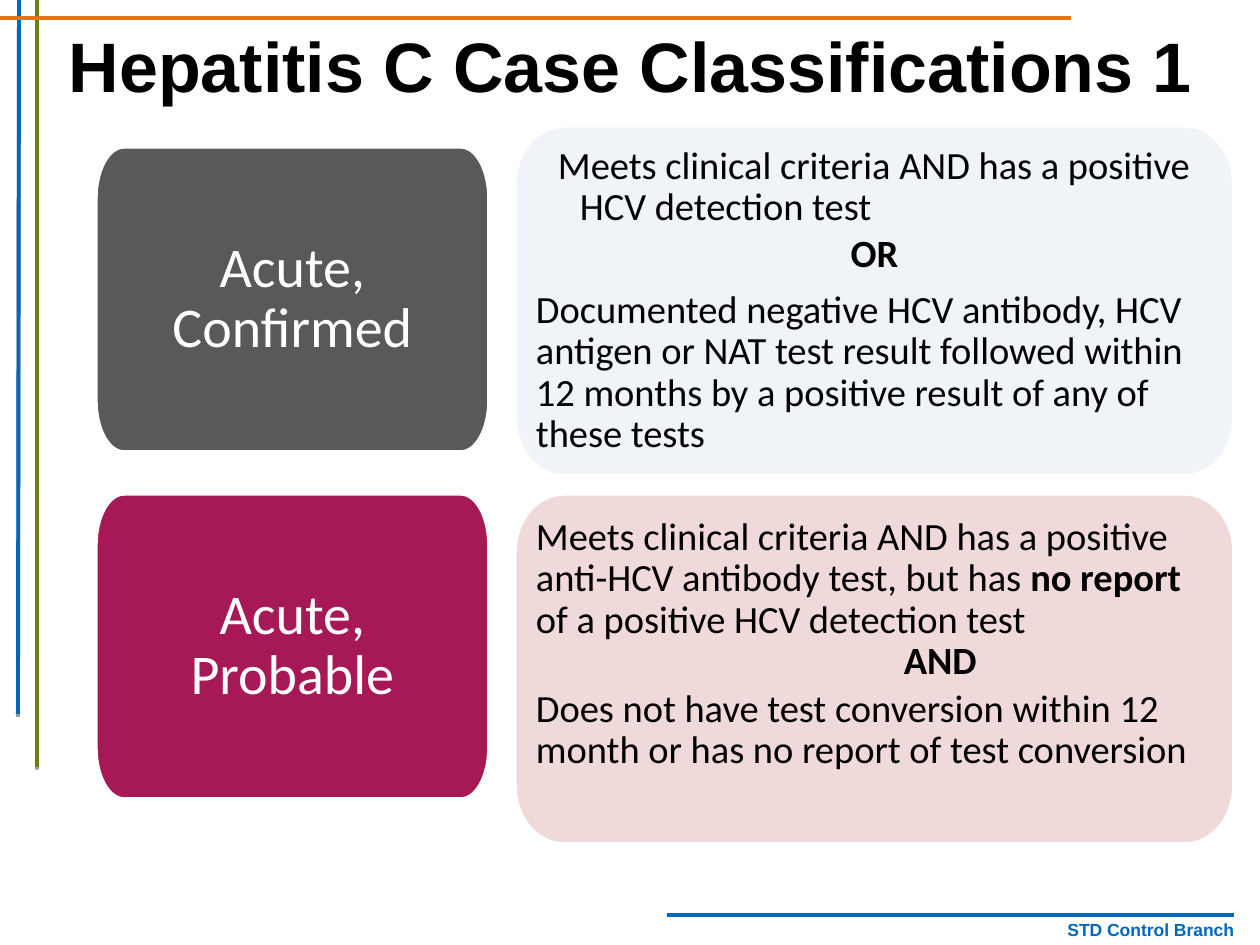
"""Build the slide of hepatitis C case classifications."""
from lxml import etree
from pptx import Presentation
from pptx.dml.color import RGBColor
from pptx.enum import shapes, text
from pptx.oxml.ns import qn
from pptx.util import Pt

PX = 914400 / 126
LEFT, CENTER, RIGHT = text.PP_ALIGN.LEFT, text.PP_ALIGN.CENTER, text.PP_ALIGN.RIGHT
TOP, MIDDLE = text.MSO_ANCHOR.TOP, text.MSO_ANCHOR.MIDDLE
CURVE = 0.55

RULES = [
    ((667, 915), (1234, 915), "0167BB", False),
    ((19, 0), (18, 714), "0167BB", True),
    ((37, 0), (37, 767), "658313", True),
    ((0, 18), (1071, 18), "E47313", False),
]
TITLE = "Hepatitis C Case Classifications 1"
BRANCH = "STD Control Branch"

CRITERIA_FIELDS = ("runs", "align", "margin", "indent", "after")
CLASSES = [
    {
        "name": "Acute, Confirmed", "card_top": 147, "panel_top": 126,
        "card_fill": "595959", "panel_fill": "F0F3F8", "anchor": MIDDLE, "inset": 15,
        "criteria": [
            ([("Meets clinical criteria AND has a positive HCV detection test", False)], LEFT, 44, -22, 3.3),
            ([("OR", True)], CENTER, 0, 0, 7.7),
            ([("Documented negative HCV antibody, HCV antigen or NAT test result followed "
               "within 12 months by a positive result of any of these tests", False)], LEFT, 0, 0, 0),
        ],
    },
    {
        "name": "Acute, Probable", "card_top": 494, "panel_top": 494,
        "card_fill": "A71956", "panel_fill": "F0D9D9", "anchor": TOP, "inset": 23,
        "criteria": [
            ([("Meets clinical criteria AND has a positive anti-HCV antibody test, but has ", False),
              ("no report ", True), ("of a positive HCV detection test", False)], LEFT, 0, 0, 0),
            ([("AND", True)], LEFT, 368, 0, 3.3),
            ([("Does not have test conversion within 12 month or has no report of test "
               "conversion", False)], LEFT, 0, 0, 0),
        ],
    },
]
CARD = {"left": 96, "width": 393, "height": 305, "radii": (28, 51)}
PANEL = {"left": 515, "width": 719, "height": 350, "radii": (49, 58)}


def emu(px):
    return round(px * PX)


def color(value):
    return RGBColor.from_string(value)


def add_rule(slide, start, end, tint, shadowed):
    rule = slide.shapes.add_connector(
        shapes.MSO_CONNECTOR.STRAIGHT, *map(emu, start + end))
    rule.line.color.rgb = color(tint)
    rule.line.width = Pt(2.25)
    effects = etree.SubElement(rule._element.spPr, qn("a:effectLst"))
    if shadowed:
        shadow = etree.SubElement(effects, qn("a:outerShdw"), dist="20320", dir="5400000")
        black = etree.SubElement(shadow, qn("a:srgbClr"), val="000000")
        etree.SubElement(black, qn("a:alpha"), val="38000")


def round_corner(segment, start, vertex, end):
    curve = etree.Element(qn("a:cubicBezTo"))
    handles = [tuple(p + CURVE * (v - p) for p, v in zip(point, vertex))
               for point in (start, end)]
    for x, y in (*handles, end):
        etree.SubElement(curve, qn("a:pt"), x=str(emu(x)), y=str(emu(y)))
    segment.getparent().replace(segment, curve)


def add_rounded(slide, top, fill, left, width, height, radii):
    rx, ry = radii
    corners = [
        ((0, ry), (0, 0), (rx, 0)),
        ((width - rx, 0), (width, 0), (width, ry)),
        ((width, height - ry), (width, height), (width - rx, height)),
        ((rx, height), (0, height), (0, height - ry)),
    ]
    outline = [tuple(map(emu, point)) for start, _, end in corners for point in (start, end)]
    builder = slide.shapes.build_freeform(*outline[0])
    builder.add_line_segments(outline[1:], close=True)
    block = builder.convert_to_shape(emu(left), emu(top))
    segments = list(block._element.iter(qn("a:lnTo")))
    for segment, corner in zip(segments[::2], corners):
        round_corner(segment, *corner)
    block.shadow.inherit = False
    block.fill.solid()
    block.fill.fore_color.rgb = color(fill)
    block.line.color.rgb = color("FFFFFF")
    block.line.width = Pt(2)
    return block


def write(frame, paragraphs, font, size, tint, anchor=MIDDLE, insets=(21, 15), spacing=0.9):
    frame.word_wrap = True
    frame.vertical_anchor = anchor
    frame.margin_left = frame.margin_right = emu(insets[0])
    frame.margin_top = frame.margin_bottom = emu(insets[1])
    for index, fields in enumerate(paragraphs):
        entry = dict(zip(CRITERIA_FIELDS, fields))
        paragraph = frame.add_paragraph() if index else frame.paragraphs[0]
        properties = paragraph._p.get_or_add_pPr()
        properties.set("marL", str(emu(entry["margin"])))
        properties.set("indent", str(emu(entry["indent"])))
        paragraph.alignment = entry["align"]
        paragraph.line_spacing = spacing
        paragraph.space_after = Pt(entry["after"])
        for words, bold in entry["runs"]:
            run = paragraph.add_run()
            run.text = words
            run.font.name, run.font.size, run.font.bold = font, Pt(size), bold
            run.font.color.rgb = color(tint)


def add_label(slide, words, box, align, size, tint, insets):
    label = slide.shapes.add_textbox(*map(emu, box))
    write(label.text_frame, [([(words, True)], align, 0, 0, 0)],
          "Arial", size, tint, insets=insets, spacing=1.0)


def main():
    deck = Presentation()
    deck.slide_width, deck.slide_height = emu(1260), emu(945)
    slide = deck.slides.add_slide(deck.slide_layouts[6])
    add_label(slide, BRANCH, (679, 905, 567, 50), RIGHT, 10, "0167BB", (12, 6))
    for rule in RULES:
        add_rule(slide, *rule)
    add_label(slide, TITLE, (53, 21, 1155, 88), CENTER, 40, "000000", (0, 6))
    for case in CLASSES:
        card = add_rounded(slide, case["card_top"], case["card_fill"], **CARD)
        write(card.text_frame, [([(case["name"], False)], CENTER, 0, 0, 0)],
              "Calibri", 32, "FFFFFF")
        panel = add_rounded(slide, case["panel_top"], case["panel_fill"], **PANEL)
        write(panel.text_frame, case["criteria"], "Calibri", 22, "000000",
              case["anchor"], (21, case["inset"]))
    deck.save("out.pptx")


if __name__ == "__main__":
    main()
